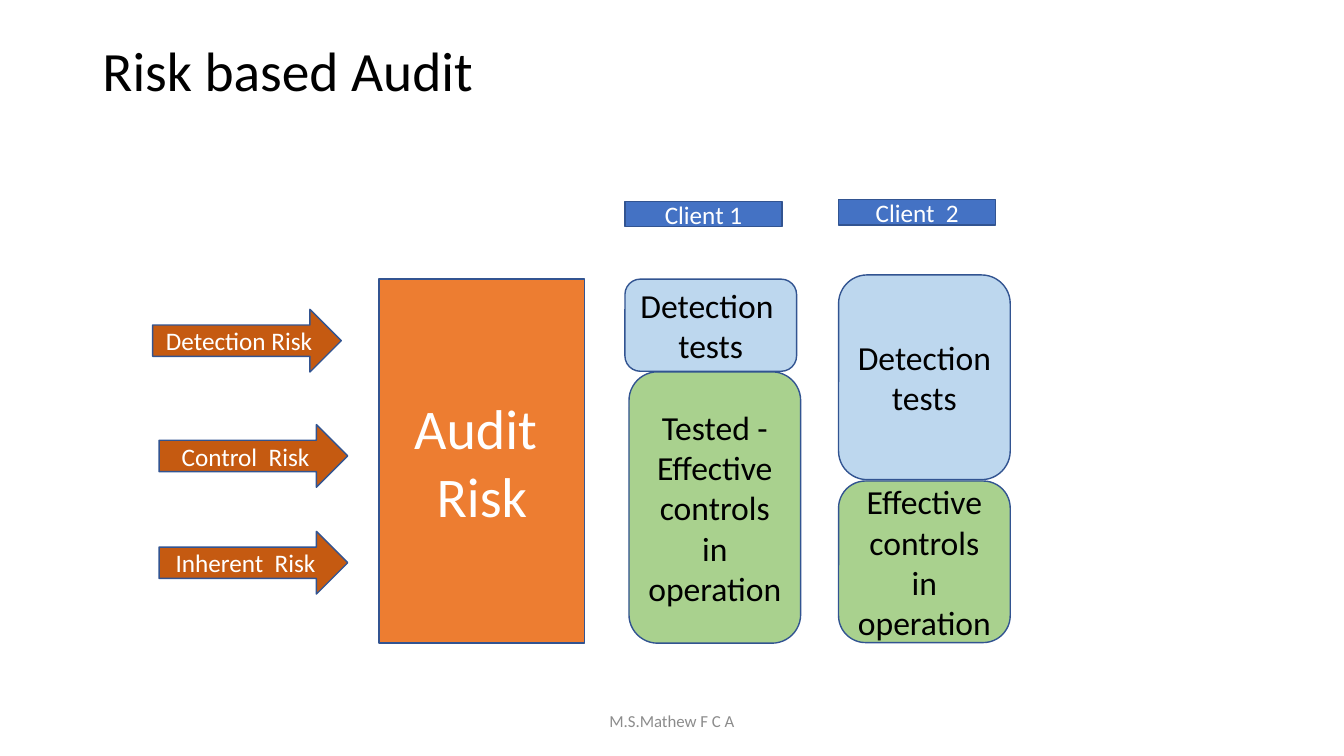
from pptx import Presentation
from pptx.dml.color import RGBColor
from pptx.enum.shapes import MSO_SHAPE
from pptx.enum.text import MSO_ANCHOR, PP_ALIGN
from pptx.util import Pt

ORANGE, RUST, BLUE = "ED7D31", "C55A11", "4472C4"
LIGHT_BLUE, GREEN, OUTLINE = "BDD7EE", "A9D18E", "325491"
BLACK, WHITE, GREY = "000000", "FFFFFF", "8C8C8C"


def rgb(value):
    return RGBColor.from_string(value)


def write(sp, lines, size, color, align=PP_ALIGN.CENTER):
    """Fill a shape with one formatted paragraph per line."""
    tf = sp.text_frame
    tf.word_wrap = True
    tf.vertical_anchor = MSO_ANCHOR.MIDDLE
    for i, line in enumerate(lines):
        p = tf.paragraphs[0] if i == 0 else tf.add_paragraph()
        p.alignment = align
        r = p.add_run()
        r.text = line
        for name, value in {"name": "Calibri", "size": Pt(size), "bold": False}.items():
            setattr(r.font, name, value)
        r.font.color.rgb = rgb(color)


def add_block(slide, kind, box, fill, lines, size, color):
    sp = slide.shapes.add_shape(kind, *map(Pt, box))
    sp.shadow.inherit = False
    sp.fill.solid()
    sp.fill.fore_color.rgb = rgb(fill)
    sp.line.color.rgb = rgb(OUTLINE)
    sp.line.width = Pt(1)
    write(sp, lines, size, color)


def add_title(slide, box, text):
    sp = slide.shapes.title
    for name, value in zip(("left", "top", "width", "height"), box):
        setattr(sp, name, Pt(value))
    write(sp, [text], 39.6, BLACK, PP_ALIGN.LEFT)
    sp.text_frame.paragraphs[0].line_spacing = 0.9


def add_footer(slide, box, text):
    write(slide.shapes.add_textbox(*map(Pt, box)), [text], 12, GREY)


def add_risk_arrows(slide, box, risks):
    """Place an arrow for each (text, x offset, y offset) in the box."""
    left, top, width, height = box
    for text, dx, dy in risks:
        add_block(slide, MSO_SHAPE.RIGHT_ARROW, (left + dx, top + dy, width, height),
                  RUST, [text], 18, WHITE)


def add_client(slide, box, name, header_top, tests_height, controls, shift, gap):
    """Stack controls under detection tests, with the client's name above."""
    left, top, width, height = box
    used = tests_height + gap
    add_block(slide, MSO_SHAPE.ROUNDED_RECTANGLE,
              (left + shift, top + used, width, height - used),
              GREEN, [controls], 24, BLACK)
    add_block(slide, MSO_SHAPE.ROUNDED_RECTANGLE, (left, top, width, tests_height),
              LIGHT_BLUE, ["Detection ", "tests"], 24, BLACK)
    add_block(slide, MSO_SHAPE.RECTANGLE, (left, header_top, 112.3, 18),
              BLUE, [name], 18, WHITE)


def main():
    prs = Presentation()
    prs.slide_width, prs.slide_height = Pt(960), Pt(540)
    slide = prs.slides.add_slide(prs.slide_layouts[5])
    add_title(slide, (66, 28.8, 828, 46.8), "Risk based Audit")
    add_footer(slide, (318, 500.5, 324, 28.75), "M.S.Mathew F C A")
    add_block(slide, MSO_SHAPE.RECTANGLE, (270.7, 199.4, 147, 260), ORANGE,
              ["Audit ", "Risk"], 40, WHITE)
    add_client(slide, (446.4, 199.4, 122.6, 260), "Client 1", 144, 65.8,
               "Tested - Effective controls in operation", 2.9, 0.4)
    add_client(slide, (599, 196.4, 122.6, 262.6), "Client  2", 142.6, 146.2,
               "Effective controls in operation", 0, 1)
    add_risk_arrows(slide, (109, 221, 134.8, 44.8),
                    [("Detection Risk", 0, 0), ("Control  Risk", 4.6, 82.3),
                     ("Inherent  Risk", 4.6, 158.6)])
    prs.save("out.pptx")


if __name__ == "__main__":
    main()
